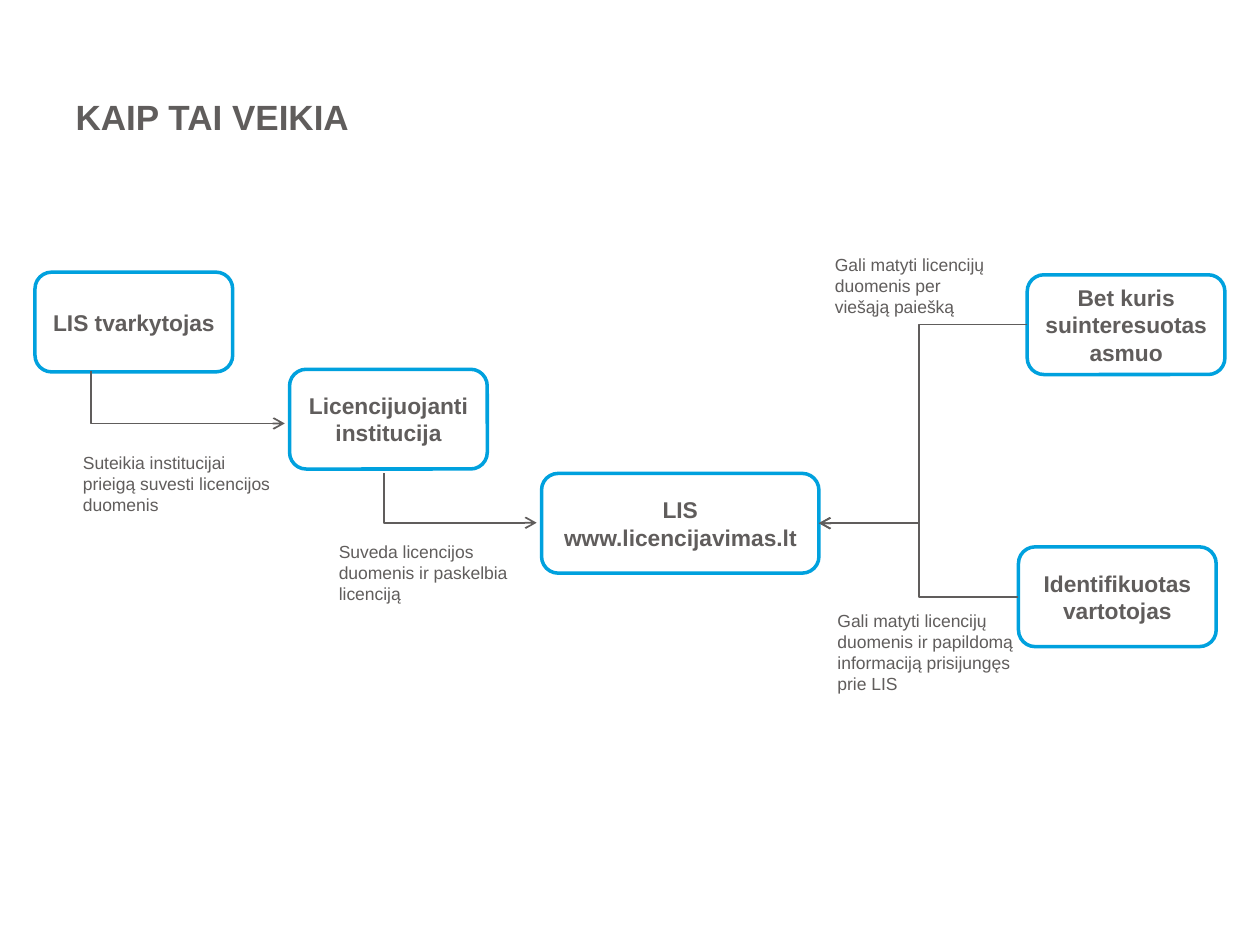
from dataclasses import dataclass

from lxml.etree import SubElement
from pptx import Presentation
from pptx.dml.color import RGBColor
from pptx.enum.shapes import MSO_CONNECTOR, MSO_SHAPE
from pptx.enum.text import MSO_ANCHOR, PP_ALIGN
from pptx.oxml.ns import qn
from pptx.util import Pt


@dataclass(frozen=True)
class Theme:
    font: str = "Arial"
    text: RGBColor = RGBColor(0x60, 0x5D, 0x5C)
    accent: RGBColor = RGBColor(0x00, 0xA1, 0xDE)
    title_size: int = 20
    box_size: int = 13
    note_size: int = 10


theme = Theme()


def write_text(shape, text, size, bold, alignment, anchor):
    frame = shape.text_frame
    frame.word_wrap = True
    frame.vertical_anchor = anchor
    frame.text = text
    font_values = {"name": theme.font, "size": Pt(size), "bold": bold}
    for paragraph in frame.paragraphs:
        paragraph.alignment = alignment
        for name, value in font_values.items():
            setattr(paragraph.font, name, value)
        paragraph.font.color.rgb = theme.text


def add_arrow(begin_x, begin_y, end_x, end_y):
    connector = slide.shapes.add_connector(
        MSO_CONNECTOR.ELBOW, Pt(begin_x), Pt(begin_y), Pt(end_x), Pt(end_y))
    connector.line.color.rgb = theme.text
    connector.line.width = Pt(1)
    properties = connector._element.spPr
    SubElement(properties.find(qn("a:ln")), qn("a:tailEnd"), type="arrow")
    SubElement(properties, qn("a:effectLst"))
    return connector


presentation = Presentation()
presentation.slide_width = Pt(720)
presentation.slide_height = Pt(540)
slide = presentation.slides.add_slide(presentation.slide_layouts[5])

title = slide.shapes.title
title_place = {"left": 36, "top": 21.6, "width": 648, "height": 90}
for name, value in title_place.items():
    setattr(title, name, Pt(value))
write_text(title, "KAIP TAI VEIKIA", theme.title_size, True,
           PP_ALIGN.LEFT, MSO_ANCHOR.MIDDLE)

box_height = 57
box_places = {
    "LIS\nwww.licencijavimas.lt": (309.5, 270.5, 158.5),
    "Licencijuojanti\vinstitucija": (165.5, 211, 113),
    "LIS tvarkytojas": (20, 155.5, 113),
    "Identifikuotas vartotojas": (582, 312.5, 113),
    "Bet kuris suinteresuotas asmuo": (587, 157, 113),
}
boxes = []
for text, (left, top, width) in box_places.items():
    box = slide.shapes.add_shape(
        MSO_SHAPE.ROUNDED_RECTANGLE, Pt(left), Pt(top), Pt(width), Pt(box_height))
    box.shadow.inherit = False
    box.fill.background()
    box.line.color.rgb = theme.accent
    box.line.width = Pt(2)
    write_text(box, text, theme.box_size, True, PP_ALIGN.CENTER, MSO_ANCHOR.MIDDLE)
    boxes.append(box)
register, institution, manager, identified_user, interested_person = boxes

notes = [
    ("Suteikia institucijai prieigą suvesti licencijos duomenis", 40.3, 255, 124.5, 44),
    ("Suveda licencijos duomenis ir paskelbia licenciją", 186.5, 305.5, 118, 44),
    ("Gali matyti licencijų duomenis per viešąją paiešką", 470, 141.5, 101.5, 44),
    ("Gali matyti licencijų duomenis ir papildomą informaciją prisijungęs prie LIS",
     471.5, 345, 116, 55.5),
]
for text, *place in notes:
    note = slide.shapes.add_textbox(*map(Pt, place))
    write_text(note, text, theme.note_size, False, PP_ALIGN.LEFT, MSO_ANCHOR.TOP)

for start_x, start_y, end_x, end_y in [(52, 212, 162.7, 242), (219.5, 270.5, 306.7, 298.7)]:
    middle_x, middle_y = (start_x + end_x) / 2, (start_y + end_y) / 2
    half_width, half_height = (end_y - start_y) / 2, (end_x - start_x) / 2
    step = add_arrow(middle_x + half_width, middle_y - half_height,
                     middle_x - half_width, middle_y + half_height)
    properties = step._element.spPr
    properties.find(qn("a:xfrm")).set("rot", "16200000")
    properties.find(qn("a:prstGeom")).set("prst", "bentConnector2")

for reader, bend in [(interested_person, 52000), (identified_user, 50000)]:
    access = add_arrow(0, 0, 1, 1)
    access.begin_connect(reader, 1)
    access.end_connect(register, 3)
    geometry = access._element.spPr.find(qn("a:prstGeom"))
    SubElement(geometry.find(qn("a:avLst")), qn("a:gd"), name="adj1", fmla=f"val {bend}")

presentation.save("out.pptx")
